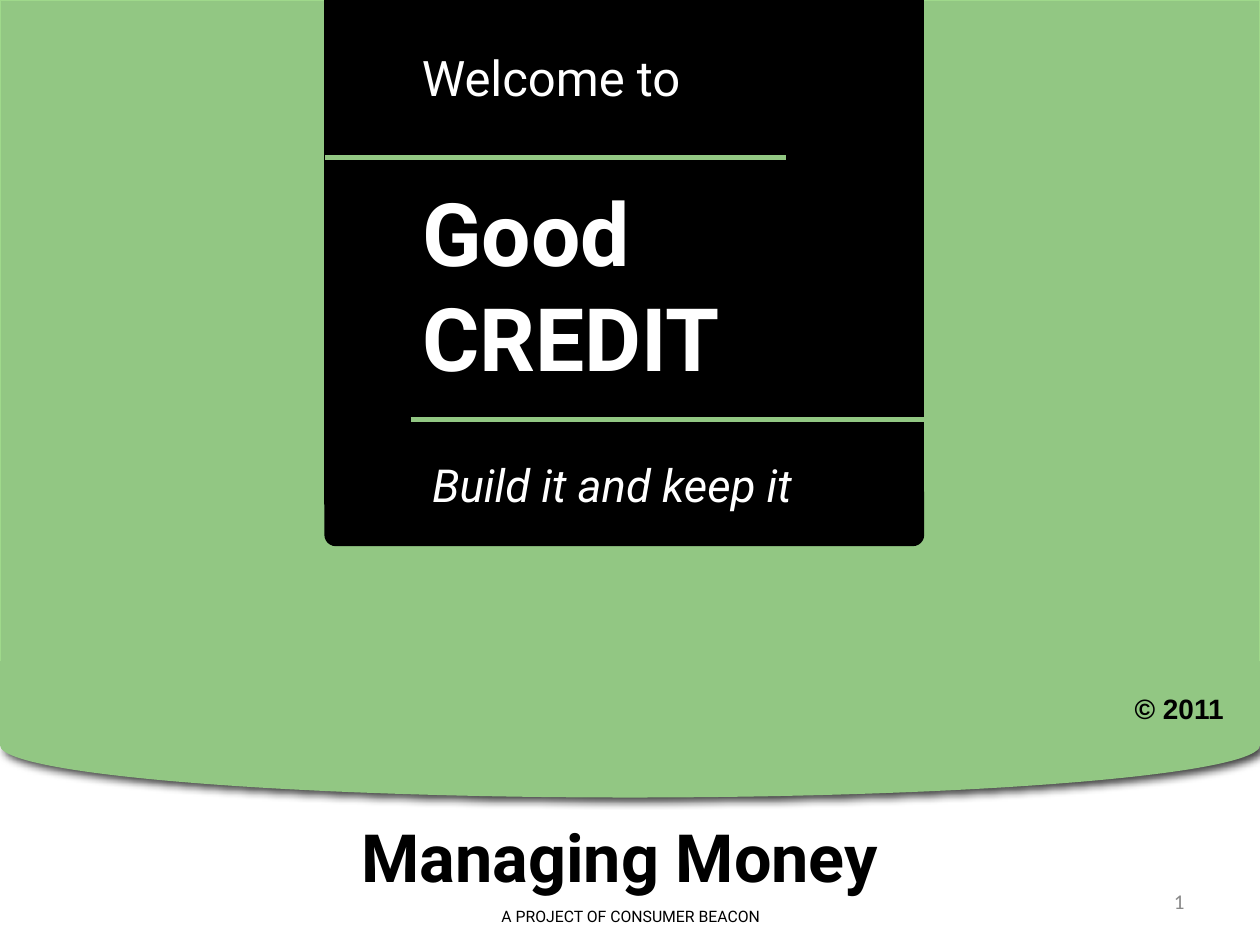
from lxml import etree
from pptx import Presentation
from pptx.dml.color import RGBColor
from pptx.enum.shapes import MSO_CONNECTOR, MSO_SHAPE
from pptx.enum.text import MSO_ANCHOR, MSO_AUTO_SIZE, PP_ALIGN
from pptx.oxml import parse_xml
from pptx.oxml.ns import nsdecls, qn
from pptx.util import Inches, Pt

RECT, OVAL, ROUND = MSO_SHAPE.RECTANGLE, MSO_SHAPE.OVAL, MSO_SHAPE.ROUNDED_RECTANGLE
LEFT, CENTER, RIGHT = PP_ALIGN.LEFT, PP_ALIGN.CENTER, PP_ALIGN.RIGHT
TOP, MIDDLE = MSO_ANCHOR.TOP, MSO_ANCHOR.MIDDLE

GREEN = RGBColor(0x92, 0xC7, 0x83)
LIGHT_GREEN = RGBColor(0x9F, 0xD9, 0x8B)
BLACK = RGBColor(0, 0, 0)
WHITE = RGBColor(0xFF, 0xFF, 0xFF)
GREY = RGBColor(0x89, 0x89, 0x89)


def add_block(s, kind, x, y, w, h, fill, line=None):
    sp = s.shapes.add_shape(kind, Inches(x), Inches(y), Inches(w), Inches(h))
    sp.shadow.inherit = False
    sp.fill.solid()
    sp.fill.fore_color.rgb = fill
    if line is None:
        sp.line.fill.background()
    else:
        sp.line.color.rgb = line
        sp.line.width = Pt(0.75)
    return sp


def add_rule(s, x1, x2, y):
    rule = s.shapes.add_connector(
        MSO_CONNECTOR.STRAIGHT, Inches(x1), Inches(y), Inches(x2), Inches(y))
    rule.line.color.rgb = GREEN
    rule.line.width = Pt(2.5)
    etree.SubElement(rule._element.spPr, qn("a:effectLst"))


def set_text(sp, lines, size, color, align=LEFT, font="Roboto",
             bold=False, italic=False, anchor=TOP, wrap=True):
    tf = sp.text_frame
    tf.text = "\n".join(lines)
    tf.word_wrap = wrap
    tf.auto_size = MSO_AUTO_SIZE.NONE
    tf.vertical_anchor = anchor
    for p in tf.paragraphs:
        p.alignment = align
        p.space_before = Pt(0)
        p.font.name = font
        p.font.size = Pt(size)
        p.font.bold = bold
        p.font.italic = italic
        p.font.color.rgb = color


def add_label(s, x, y, w, h, *args, **kwargs):
    box = s.shapes.add_textbox(Inches(x), Inches(y), Inches(w), Inches(h))
    set_text(box, *args, **kwargs)
    return box


def place_on_top(s, sp, x, y, w, h):
    sp.left, sp.top, sp.width, sp.height = map(Inches, (x, y, w, h))
    s.shapes._spTree.append(sp._element)


def add_curtain(s, x, y, w, h):
    """Green field with a curved, shadowed lower edge."""
    add_block(s, RECT, x, y, w, h - 0.17, GREEN, LIGHT_GREEN)
    add_block(s, RECT, x, y + h - 0.83, w, 0.83, WHITE)
    curve = add_block(s, OVAL, x, y + h - 1.25, w, 0.83, GREEN)
    effects = curve._element.spPr.find(qn("a:effectLst"))
    effects.append(parse_xml(
        f'<a:outerShdw {nsdecls("a")} blurRad="{Pt(5)}" dist="{Pt(3)}" '
        'dir="2700000" algn="tl" rotWithShape="0"><a:srgbClr val="000000">'
        '<a:alpha val="75000"/></a:srgbClr></a:outerShdw>'))
    # Cover the shadow above the curve
    add_block(s, RECT, x, y + h - 1.5, w, 0.67, GREEN, GREEN)
    # Copyright
    mark = add_block(s, RECT, x + w - 1.36, y + h - 1.42, 1.17, 0.58, GREEN)
    set_text(mark, ["© 2011"], 16, BLACK, RIGHT, "Arial",
             bold=True, anchor=MIDDLE, wrap=False)


def add_title_panel(s, x, y, w, h):
    """Black panel with greeting, title and tagline parted by rules."""
    add_block(s, RECT, x, y, w, h - 0.33, BLACK, BLACK)
    base = add_block(s, ROUND, x, y + h - 0.5, w, 0.5, BLACK, BLACK)
    base.adjustments[0] = 0.17
    add_rule(s, x, x + 3.66, y + 1.25)
    add_rule(s, x + 0.68, x + w, y + 3.33)

    add_label(s, x + 0.67, y + 0.33, 3.83, 0.57, ["Welcome to"], 28, WHITE)
    title, tagline = s.shapes.title, s.placeholders[1]
    place_on_top(s, title, x + 0.67, y + 1.37, 3.83, 1.77)
    set_text(title, ["Good", "CREDIT"], 50, WHITE, bold=True)
    place_on_top(s, tagline, x + 0.75, y + 3.58, 3.92, 0.53)
    set_text(tagline, ["Build it and keep it"], 26, WHITE, italic=True)


def add_footer(s, x, y, w):
    """Series name, publisher line and slide number."""
    add_label(s, x + 2.67, y, 4.5, 0.73, ["Managing Money"], 38, BLACK, CENTER, bold=True)
    add_label(s, x + 3.17, y + 0.72, 3.67, 0.25,
              ["A PROJECT OF CONSUMER BEACON"], 9, BLACK, CENTER)
    add_label(s, x + w - 2.83, y + 0.52, 2.33, 0.4, ["1"], 12, GREY, RIGHT,
              "Calibri", anchor=MIDDLE)


def main():
    prs = Presentation()
    prs.slide_width, prs.slide_height = Inches(10), Inches(7.5)
    s = prs.slides.add_slide(prs.slide_layouts[0])
    add_curtain(s, 0, 0, 10, 6.75)
    add_title_panel(s, 2.58, 0, 4.75, 4.33)
    add_footer(s, 0, 6.43, 10)
    prs.save("out.pptx")


if __name__ == "__main__":
    main()
